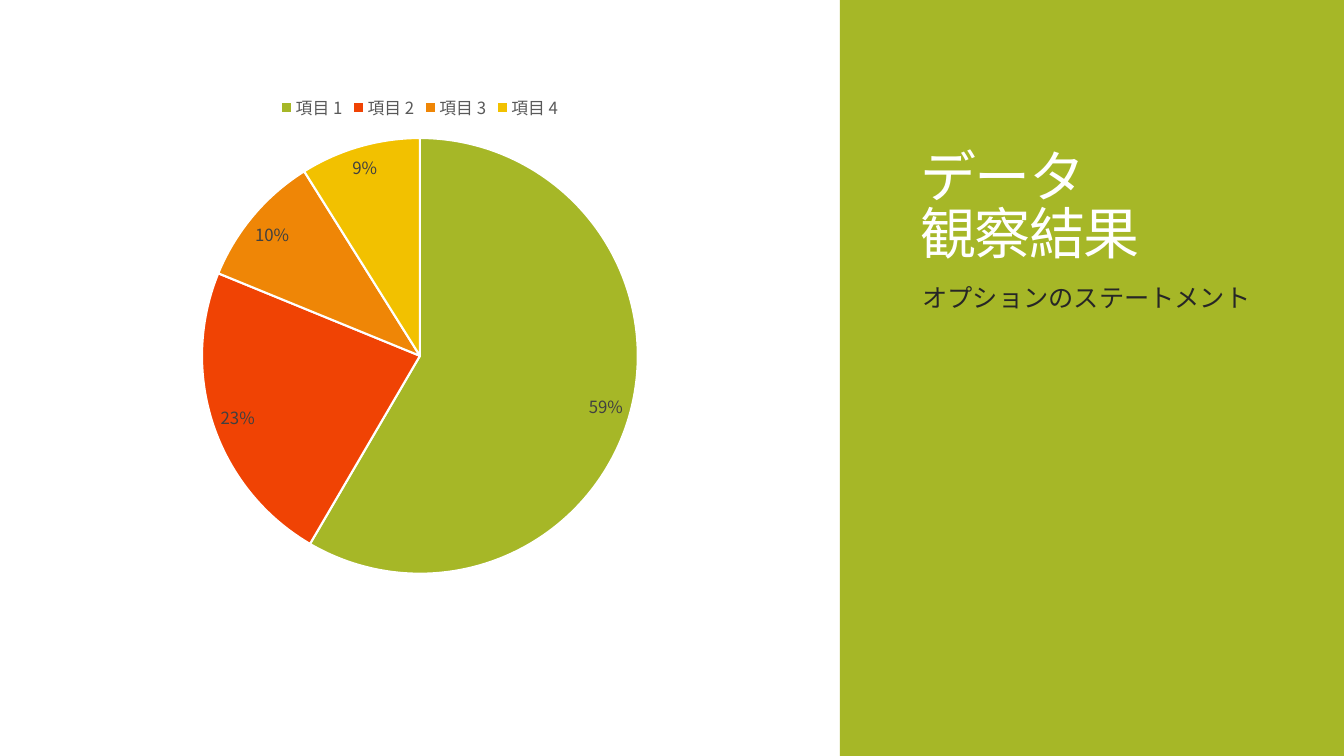
from pptx import Presentation
from pptx import util as u
from pptx.chart import data
from pptx.dml import color
from pptx.enum import chart as ch, shapes, text
from pptx.oxml import ns, xmlchemy

FONT = "Noto Sans CJK JP"


def style(font, size, hex_color):
    font.name = FONT
    font.size = u.Pt(size)
    font.bold = False
    font.color.rgb = color.RGBColor.from_string(hex_color)


def add_east_asian(element):
    for latin in list(element.iter(ns.qn("a:latin"))):
        ea = xmlchemy.OxmlElement("a:ea")
        ea.set("typeface", FONT)
        latin.addnext(ea)


prs = Presentation()
prs.slide_width = u.Inches(13.33)
prs.slide_height = u.Inches(7.5)
s = prs.slides.add_slide(prs.slide_layouts[1])

panel = s.shapes.add_shape(shapes.MSO_SHAPE.RECTANGLE, u.Inches(8.33), 0, u.Inches(5), prs.slide_height)
panel.shadow.inherit = False
panel.fill.solid()
panel.fill.fore_color.rgb = color.RGBColor.from_string("A6B727")
panel.line.fill.background()
s.shapes._spTree.insert(2, panel._element)

title, body = s.shapes.title, s.placeholders[1]
blocks = [
    (title, (9.03, 0.59, 3.7, 2.1), "データ\v観察結果", 40, "FFFFFF", text.MSO_ANCHOR.BOTTOM),
    (body, (9.05, 2.75, 3.72, 3.42), "オプションのステートメント", 18, "262626", text.MSO_ANCHOR.TOP),
]
for sp, box, wording, size, hex_color, anchor in blocks:
    sp.left, sp.top, sp.width, sp.height = [u.Inches(v) for v in box]
    tf = sp.text_frame
    tf.text = wording
    tf.word_wrap = True
    tf.auto_size = text.MSO_AUTO_SIZE.NONE
    tf.vertical_anchor = anchor
    p = tf.paragraphs[0]
    p.alignment = text.PP_ALIGN.LEFT
    for r in p.runs:
        style(r.font, size, hex_color)
    add_east_asian(sp._element)

p = title.text_frame.paragraphs[0]
p.line_spacing = 0.85
for r in p.runs:
    r._r.get_or_add_rPr().set("spc", "-120")

p = body.text_frame.paragraphs[0]
p.space_before = u.Pt(12)
pPr = p._p.get_or_add_pPr()
pPr.set("marL", "0")
pPr.set("indent", "0")
pPr.append(xmlchemy.OxmlElement("a:buNone"))

cd = data.CategoryChartData()
cd.categories = [f"項目 {n}" for n in range(1, 5)]
cd.add_series("Series 1", (59, 23, 10, 9))
chart = s.shapes.add_chart(
    ch.XL_CHART_TYPE.PIE, u.Inches(0.83), u.Inches(0.83), u.Inches(6.67), u.Inches(5), cd
).chart
style(chart.font, 10, "000000")
chart.has_title = False
chart.has_legend = True
chart.legend.position = ch.XL_LEGEND_POSITION.TOP
chart.legend.include_in_layout = False
style(chart.legend.font, 12, "595959")

plot = chart.plots[0]
plot.vary_by_categories = True
for i, hex_color in enumerate(("A6B727", "F04304", "EF8606", "F2C100")):
    fmt = plot.series[0].points[i].format
    fmt.fill.solid()
    fmt.fill.fore_color.rgb = color.RGBColor.from_string(hex_color)
    fmt.line.color.rgb = color.RGBColor.from_string("FFFFFF")
    fmt.line.width = u.Pt(1.5)

labels = plot.series[0].data_labels
labels.show_value = True
labels.number_format = '0"%"'
labels.number_format_is_linked = False
labels.position = ch.XL_LABEL_POSITION.BEST_FIT
style(labels.font, 12, "404040")
add_east_asian(chart._chartSpace)

prs.save("out.pptx")
